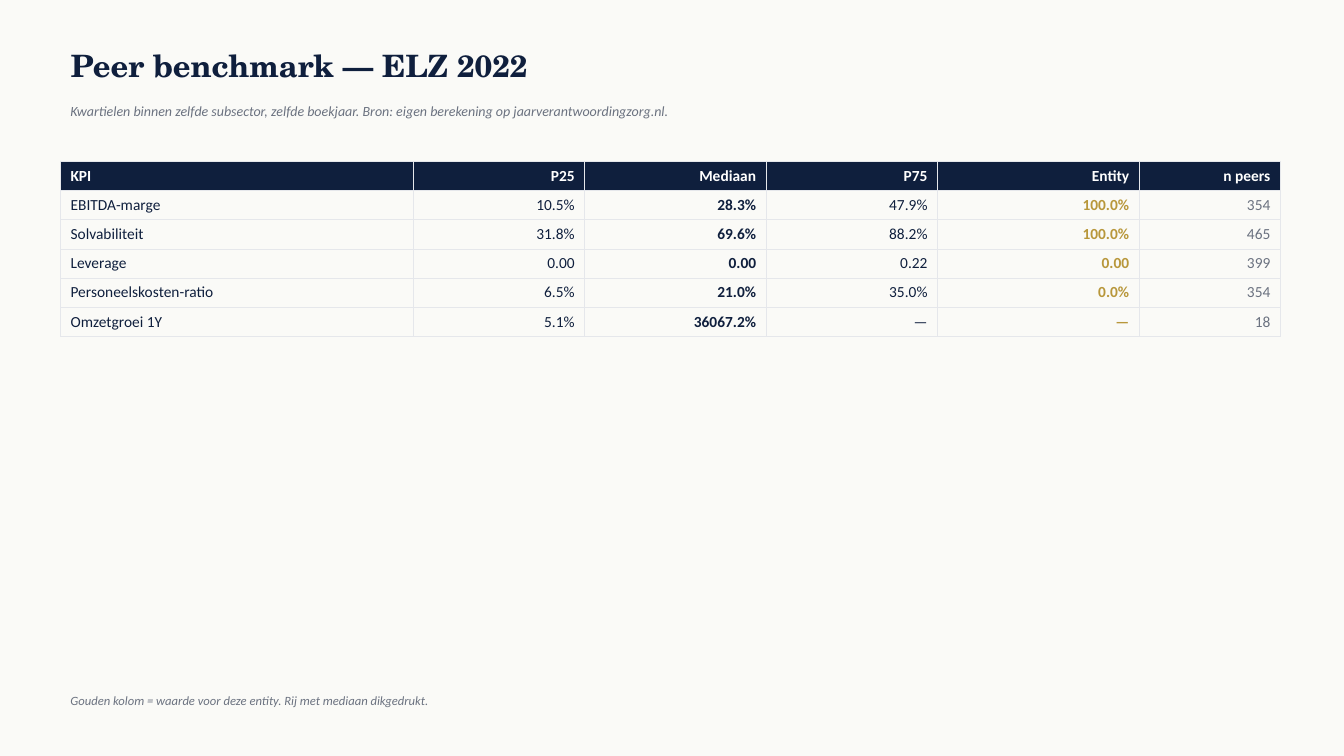
from lxml import etree
from pptx import Presentation
from pptx.dml.color import RGBColor
from pptx.enum.text import MSO_ANCHOR, MSO_AUTO_SIZE, PP_ALIGN
from pptx.oxml.ns import qn
from pptx.util import Inches, Pt

LEFT, RIGHT = PP_ALIGN.LEFT, PP_ALIGN.RIGHT
MIDDLE = MSO_ANCHOR.MIDDLE
NO_AUTOFIT = MSO_AUTO_SIZE.NONE

NAVY = RGBColor(0x0F, 0x1F, 0x3D)
GOLD = RGBColor(0xB8, 0x97, 0x3B)
GREY = RGBColor(0x6B, 0x72, 0x80)
BORDER = RGBColor(0xE5, 0xE7, 0xEB)
WHITE = RGBColor(0xFF, 0xFF, 0xFF)
PAPER = RGBColor(0xFA, 0xFA, 0xF7)

TITLE_FONT = "TeX Gyre Schola"
BODY_FONT = "Calibri"
MARGIN, TEXT_WIDTH = 0.6, 12
ROW_HEIGHT = 0.29

# Heading, width, text colour, bold
COLUMNS = [
    ("KPI", 3.5, NAVY, False),
    ("P25", 1.7, NAVY, False),
    ("Mediaan", 1.8, NAVY, True),
    ("P75", 1.7, NAVY, False),
    ("Entity", 2, GOLD, True),
    ("n peers", 1.4, GREY, False),
]
KPI_ROWS = [
    ("EBITDA-marge", "10.5%", "28.3%", "47.9%", "100.0%", "354"),
    ("Solvabiliteit", "31.8%", "69.6%", "88.2%", "100.0%", "465"),
    ("Leverage", "0.00", "0.00", "0.22", "0.00", "399"),
    ("Personeelskosten-ratio", "6.5%", "21.0%", "35.0%", "0.0%", "354"),
    ("Omzetgroei 1Y", "5.1%", "36067.2%", "—", "—", "18"),
]


def write_text(text_frame, text, size, color, font_name=BODY_FONT,
               bold=False, italic=False, alignment=LEFT):
    text_frame.text = text
    paragraph = text_frame.paragraphs[0]
    paragraph.alignment = alignment
    font = paragraph.runs[0].font
    font.name = font_name
    font.size = Pt(size)
    font.bold = bold
    font.italic = italic
    font.color.rgb = color


def format_frame(text_frame):
    text_frame.word_wrap = True
    text_frame.auto_size = NO_AUTOFIT
    text_frame.vertical_anchor = MIDDLE


def add_title(slide, text):
    title = slide.shapes.title
    title.left, title.top = Inches(MARGIN), Inches(0.4)
    title.width, title.height = Inches(TEXT_WIDTH), Inches(0.5)
    format_frame(title.text_frame)
    write_text(title.text_frame, text, 22, NAVY, TITLE_FONT, bold=True)


def add_note(slide, text, top, size):
    """Add a grey italic line across the text width."""
    note = slide.shapes.add_textbox(
        Inches(MARGIN), Inches(top), Inches(TEXT_WIDTH), Inches(0.3))
    format_frame(note.text_frame)
    write_text(note.text_frame, text, size, GREY, italic=True)


def set_borders(cell):
    properties = cell._tc.get_or_add_tcPr()
    for position, side in enumerate(("lnL", "lnR", "lnT", "lnB")):
        line = etree.Element(qn(f"a:{side}"), w=str(Pt(0.5)))
        fill = etree.SubElement(line, qn("a:solidFill"))
        etree.SubElement(fill, qn("a:srgbClr"), val=str(BORDER))
        properties.insert(position, line)


def add_benchmark_table(slide):
    rows = [[column[0] for column in COLUMNS], *KPI_ROWS]
    total_width = sum(column[1] for column in COLUMNS)
    table = slide.shapes.add_table(
        len(rows), len(COLUMNS), Inches(MARGIN), Inches(1.6),
        Inches(total_width), Inches(ROW_HEIGHT * len(rows))).table
    table.horz_banding = False
    for column_index, (_, width, color, bold) in enumerate(COLUMNS):
        table.columns[column_index].width = Inches(width)
        alignment = RIGHT if column_index else LEFT
        for row_index, values in enumerate(rows):
            is_header = row_index == 0
            cell = table.cell(row_index, column_index)
            write_text(cell.text_frame, values[column_index], 11,
                       WHITE if is_header else color,
                       bold=is_header or bold, alignment=alignment)
            if is_header:
                cell.fill.solid()
                cell.fill.fore_color.rgb = NAVY
            else:
                cell.fill.background()
            set_borders(cell)


def main():
    presentation = Presentation()
    presentation.slide_width = Inches(13.33)
    presentation.slide_height = Inches(7.5)
    slide = presentation.slides.add_slide(presentation.slide_layouts[5])
    slide.background.fill.solid()
    slide.background.fill.fore_color.rgb = PAPER

    add_title(slide, "Peer benchmark — ELZ 2022")
    add_note(slide, "Kwartielen binnen zelfde subsector, zelfde boekjaar. "
             "Bron: eigen berekening op jaarverantwoordingzorg.nl.", 0.95, 10)
    add_benchmark_table(slide)
    add_note(slide, "Gouden kolom = waarde voor deze entity. "
             "Rij met mediaan dikgedrukt.", 6.8, 9)
    presentation.save("out.pptx")


if __name__ == "__main__":
    main()
